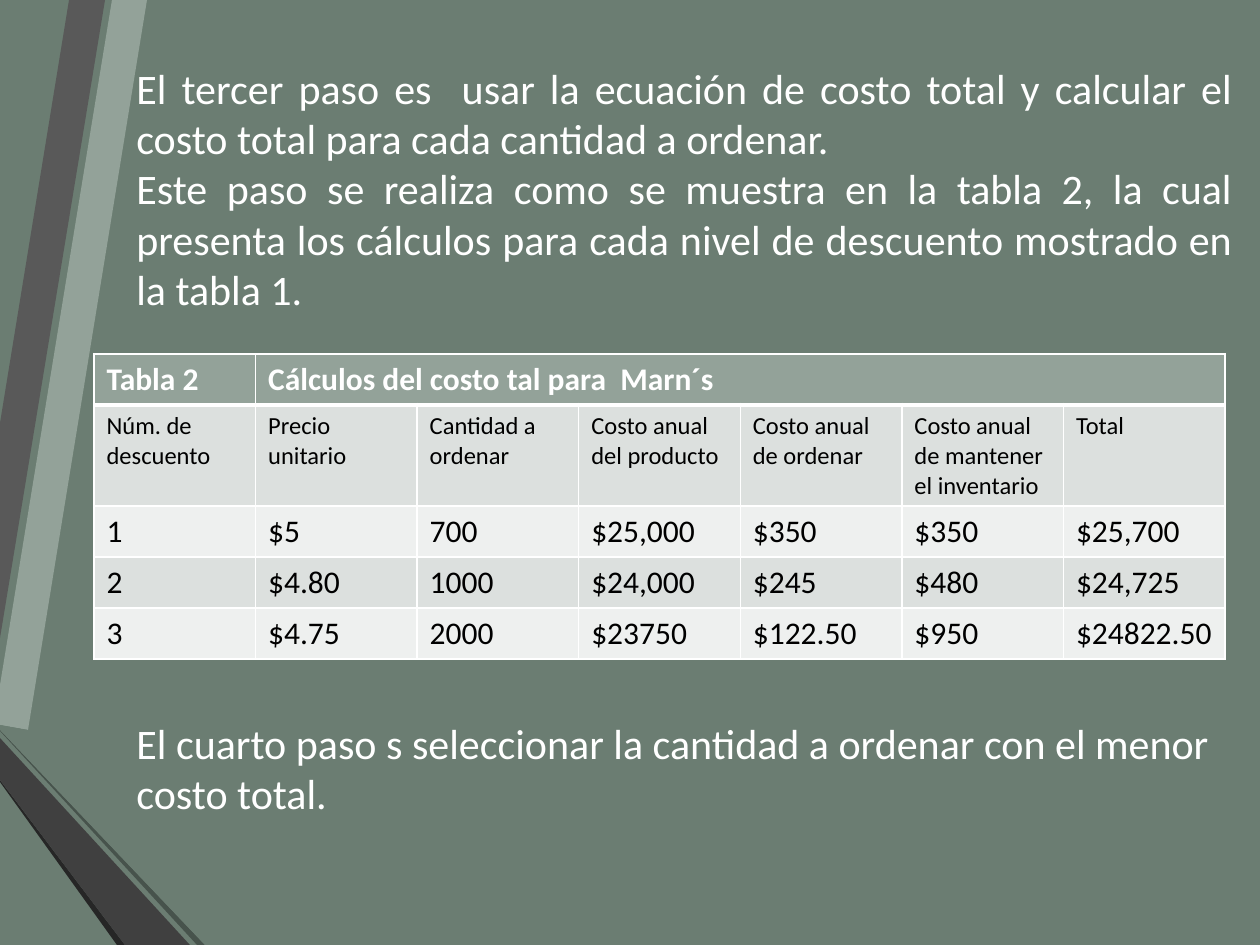
import pptx
import pptx.dml.color
import pptx.enum.text
import pptx.oxml
import pptx.oxml.ns
import pptx.util

SCALE = 914400 / 126
FONT = "Calibri"
COLORS = {
    "background": "6B7D72",
    "sage": "93A299",
    "gray": "595959",
    "charcoal": "404040",
    "black": "262626",
    "moss": "47534C",
    "band_dark": "DCE0DE",
    "band_light": "EEF0EF",
    "white": "FFFFFF",
    "text": "000000",
}
RIBBONS = [
    ("sage", [(0, 685), (0, 725), (28, 730), (147, 0), (112, 0)]),
    ("gray", [(105, 0), (69, 0), (0, 423), (0, 638)]),
    ("black", [(0, 780), (0, 782), (117, 945), (125, 945)]),
    ("moss", [(0, 730), (0, 731), (197, 945), (205, 945)]),
    ("background", [(0, 730), (205, 945), (294, 945), (28, 730), (0, 725)]),
    ("charcoal", [(0, 780), (125, 945), (190, 945), (0, 738)]),
]
THIRD_STEP = [
    "El tercer paso es  usar la ecuación de costo total y calcular el costo total para cada cantidad a ordenar.",
    "Este paso se realiza como se muestra en la tabla 2, la cual presenta los cálculos para cada nivel de descuento mostrado en la tabla 1.",
]
FOURTH_STEP = ["El cuarto paso s seleccionar la cantidad a ordenar con el menor costo total."]
COST_ROWS = [
    ["Tabla 2", "Cálculos del costo tal para  Marn´s", "", "", "", "", ""],
    ["Núm. de descuento", "Precio unitario", "Cantidad a ordenar", "Costo anual del producto",
     "Costo anual de ordenar", "Costo anual de mantener el inventario", "Total"],
    ["1", "$5", "700", "$25,000", "$350", "$350", "$25,700"],
    ["2", "$4.80", "1000", "$24,000", "$245", "$480", "$24,725"],
    ["3", "$4.75", "2000", "$23750", "$122.50", "$950", "$24822.50"],
]
ROW_HEIGHTS = [51, 100, 51, 51, 51]


def px(length):
    return pptx.util.Emu(round(length * SCALE))


def rgb(name):
    return pptx.dml.color.RGBColor.from_string(COLORS[name])


def paint(fill, color):
    fill.solid()
    fill.fore_color.rgb = rgb(color)


def format_runs(paragraph, size, color, bold=False):
    for run in paragraph.runs:
        run.font.name = FONT
        run.font.size = pptx.util.Pt(size)
        run.font.bold = bold
        run.font.color.rgb = rgb(color)


def add_ribbons(slide, left, top):
    for color, points in RIBBONS:
        corners = [(px(left + x), px(top + y)) for x, y in points]
        builder = slide.shapes.build_freeform(*corners[0], scale=1.0)
        builder.add_line_segments(corners[1:], close=True)
        shape = builder.convert_to_shape()
        shape.shadow.inherit = False
        paint(shape.fill, color)
        shape.line.fill.background()


def add_paragraphs(slide, box, texts, alignment):
    shape = slide.shapes.add_textbox(*map(px, box))
    text_frame = shape.text_frame
    text_frame.word_wrap = True
    text_frame.text = "\n".join(texts)
    for paragraph in text_frame.paragraphs:
        paragraph.alignment = alignment
        format_runs(paragraph, 24, "white")


def set_borders(cell, widths):
    properties = cell._tc.get_or_add_tcPr()
    for side, width in widths.items():
        properties.append(pptx.oxml.parse_xml(
            f'<a:ln{side} {pptx.oxml.ns.nsdecls("a")} w="{pptx.util.Pt(width)}">'
            f'<a:solidFill><a:srgbClr val="{COLORS["white"]}"/></a:solidFill></a:ln{side}>'))


def add_cost_table(slide, box):
    column_count = len(COST_ROWS[0])
    table = slide.shapes.add_table(len(COST_ROWS), column_count, *map(px, box)).table
    for column in table.columns:
        column.width = px(box[2] / column_count)
    for row, height in zip(table.rows, ROW_HEIGHTS):
        row.height = px(height)
    table.cell(0, 1).merge(table.cell(0, column_count - 1))
    for row_index, texts in enumerate(COST_ROWS):
        header = row_index == 0
        fill = "sage" if header else "band_dark" if row_index % 2 else "band_light"
        size = 14 if row_index == 1 else 18
        for column_index, text in enumerate(texts):
            cell = table.cell(row_index, column_index)
            set_borders(cell, {"L": 1, "R": 1, "T": 3 if row_index == 1 else 1, "B": 3 if header else 1})
            paint(cell.fill, fill)
            if text:
                cell.text_frame.text = text
                format_runs(cell.text_frame.paragraphs[0], size, "white" if header else "text", header)


def main():
    presentation = pptx.Presentation()
    presentation.slide_width = px(1260)
    presentation.slide_height = px(945)
    slide = presentation.slides.add_slide(presentation.slide_layouts[6])
    paint(slide.background.fill, "background")
    add_ribbons(slide, 0, 0)
    add_paragraphs(slide, (124, 56, 1121, 267), THIRD_STEP, pptx.enum.text.PP_ALIGN.JUSTIFY)
    add_cost_table(slide, (94, 354, 1131, sum(ROW_HEIGHTS)))
    add_paragraphs(slide, (124, 711, 1101, 115), FOURTH_STEP, pptx.enum.text.PP_ALIGN.LEFT)
    presentation.save("out.pptx")


if __name__ == "__main__":
    main()
